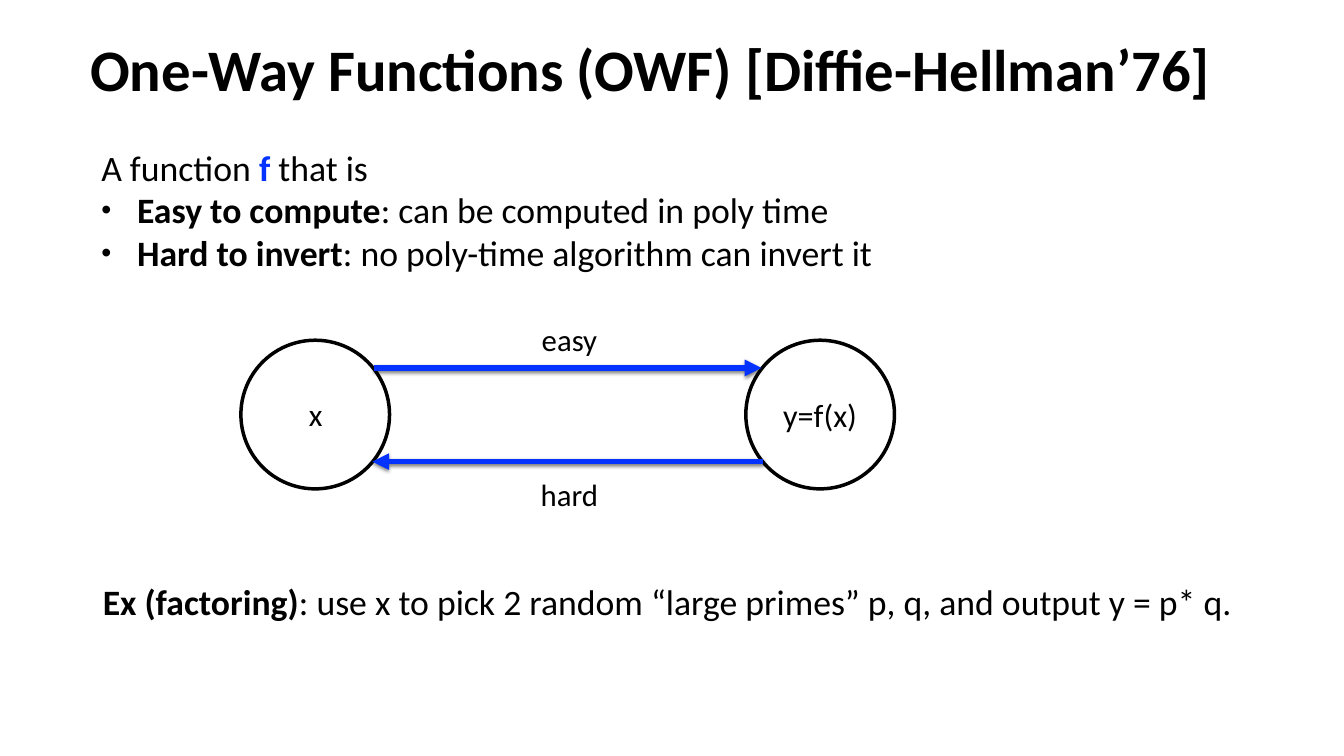
from typing import NamedTuple

from lxml.etree import SubElement
from pptx import Presentation
from pptx.dml.color import RGBColor
from pptx.enum.shapes import MSO_CONNECTOR, MSO_SHAPE
from pptx.enum.text import MSO_ANCHOR, MSO_AUTO_SIZE, PP_ALIGN
from pptx.oxml.ns import qn
from pptx.util import Inches, Pt

FONT = "Calibri"
BLACK = "000000"
BLUE = "0433FF"
CIRCLE_TOP, CIRCLE_SIZE = 6.75, 2.95
INSET = 0.06


class Piece(NamedTuple):
    text: str
    bold: bool = False
    color: str = BLACK


class Label(NamedTuple):
    pieces: list[Piece]
    box: tuple[float, float, float, float]
    size: int


class Arrow(NamedTuple):
    start_x: float
    end_x: float
    y: float


def rgb(color: str) -> RGBColor:
    return RGBColor.from_string(color)


def set_all(target, values: dict) -> None:
    for name, value in values.items():
        setattr(target, name, value)


def place(shape, box: tuple[float, float, float, float]) -> None:
    set_all(shape, dict(zip(("left", "top", "width", "height"), map(Inches, box))))


def format_frame(frame, inset: float, wrap: bool) -> None:
    margins = ("margin_left", "margin_top", "margin_right", "margin_bottom")
    set_all(frame, dict.fromkeys(margins, Inches(inset)))
    set_all(frame, {"word_wrap": wrap, "auto_size": MSO_AUTO_SIZE.NONE,
                    "vertical_anchor": MSO_ANCHOR.MIDDLE})


def write(paragraph, pieces: list[Piece], size: int, spacing: float = 1.0) -> None:
    set_all(paragraph, {"alignment": PP_ALIGN.LEFT, "line_spacing": spacing,
                        "space_before": Pt(0), "space_after": Pt(0)})
    for piece in pieces:
        run = paragraph.add_run()
        run.text = piece.text
        set_all(run.font, {"name": FONT, "size": Pt(size), "bold": piece.bold})
        run.font.color.rgb = rgb(piece.color)


def set_bullet(paragraph, bulleted: bool) -> None:
    properties = paragraph._p.get_or_add_pPr()
    indent = Inches(0.71) if bulleted else 0
    properties.set("marL", str(indent))
    properties.set("indent", str(-indent))
    if bulleted:
        SubElement(properties, qn("a:buSzPct"), val="80000")
        SubElement(properties, qn("a:buChar"), char="•")
    else:
        SubElement(properties, qn("a:buNone"))


def add_label(slide, label: Label) -> None:
    textbox = slide.shapes.add_textbox(*map(Inches, label.box))
    format_frame(textbox.text_frame, INSET, wrap=False)
    write(textbox.text_frame.paragraphs[0], label.pieces, label.size)


def add_circle(slide, left: float) -> None:
    circle = slide.shapes.add_shape(
        MSO_SHAPE.OVAL, Inches(left), Inches(CIRCLE_TOP),
        Inches(CIRCLE_SIZE), Inches(CIRCLE_SIZE))
    circle.shadow.inherit = False
    circle.fill.background()
    circle.line.color.rgb = rgb(BLACK)
    circle.line.width = Pt(5)


def add_arrow(slide, arrow: Arrow) -> None:
    connector = slide.shapes.add_connector(
        MSO_CONNECTOR.STRAIGHT, Inches(arrow.start_x), Inches(arrow.y),
        Inches(arrow.end_x), Inches(arrow.y))
    connector.line.color.rgb = rgb(BLUE)
    connector.line.width = Pt(8)
    SubElement(connector.line._get_or_add_ln(), qn("a:tailEnd"), type="triangle")
    # Soft shadow straight below the arrow
    effects = SubElement(connector._element.spPr, qn("a:effectLst"))
    shadow = SubElement(effects, qn("a:outerShdw"), blurRad=str(Pt(5)),
                        dist=str(Pt(2)), dir=str(90 * 60000), rotWithShape="0")
    shade = SubElement(shadow, qn("a:srgbClr"), val=BLACK)
    SubElement(shade, qn("a:alpha"), val="50000")


TITLE = [Piece("One-Way Functions (OWF) [Diffie-Hellman’76]", bold=True)]
DEFINITION = [
    [Piece("A function "), Piece("f", True, BLUE), Piece(" that is")],
    [Piece("Easy to compute", True), Piece(": can be computed in poly time")],
    [Piece("Hard to invert", True), Piece(": no poly-time algorithm can invert it")],
]
CIRCLE_LEFTS = [4.78, 14.8]
ARROWS = [Arrow(7.42, 15.11, 7.3), Arrow(15.14, 7.39, 9.16)]
LABELS = [
    Label([Piece("x")], (6.07, 7.85, 0.4, 0.74), 45),
    Label([Piece("y=f(x)")], (15.48, 7.84, 1.59, 0.76), 46),
    Label([Piece("easy")], (10.69, 6.36, 1.23, 0.73), 44),
    Label([Piece("hard")], (10.67, 9.44, 1.26, 0.73), 44),
    Label([Piece("Ex (factoring)", True),
           Piece(": use x to pick 2 random “large primes” p, q, and output y = p* q.")],
          (1.98, 11.51, 22.7, 0.82), 51),
]


def main() -> None:
    deck = Presentation()
    set_all(deck, {"slide_width": Inches(26.67), "slide_height": Inches(15)})
    slide = deck.slides.add_slide(deck.slide_layouts[1])

    # Title
    title = slide.shapes.title
    place(title, (1.69, 0.69, 23, 1.5))
    format_frame(title.text_frame, 0.1, wrap=True)
    write(title.text_frame.paragraphs[0], TITLE, 84, spacing=0.9)

    # Definition with its two properties
    definition = slide.placeholders[1]
    place(definition, (1.95, 2.89, 15.58, 2.54))
    frame = definition.text_frame
    format_frame(frame, INSET, wrap=False)
    for index, pieces in enumerate(DEFINITION):
        paragraph = frame.add_paragraph() if index else frame.paragraphs[0]
        write(paragraph, pieces, 51)
        set_bullet(paragraph, bulleted=index > 0)

    # Diagram and factoring example
    for left in CIRCLE_LEFTS:
        add_circle(slide, left)
    for arrow in ARROWS:
        add_arrow(slide, arrow)
    for label in LABELS:
        add_label(slide, label)

    deck.save("out.pptx")


if __name__ == "__main__":
    main()
